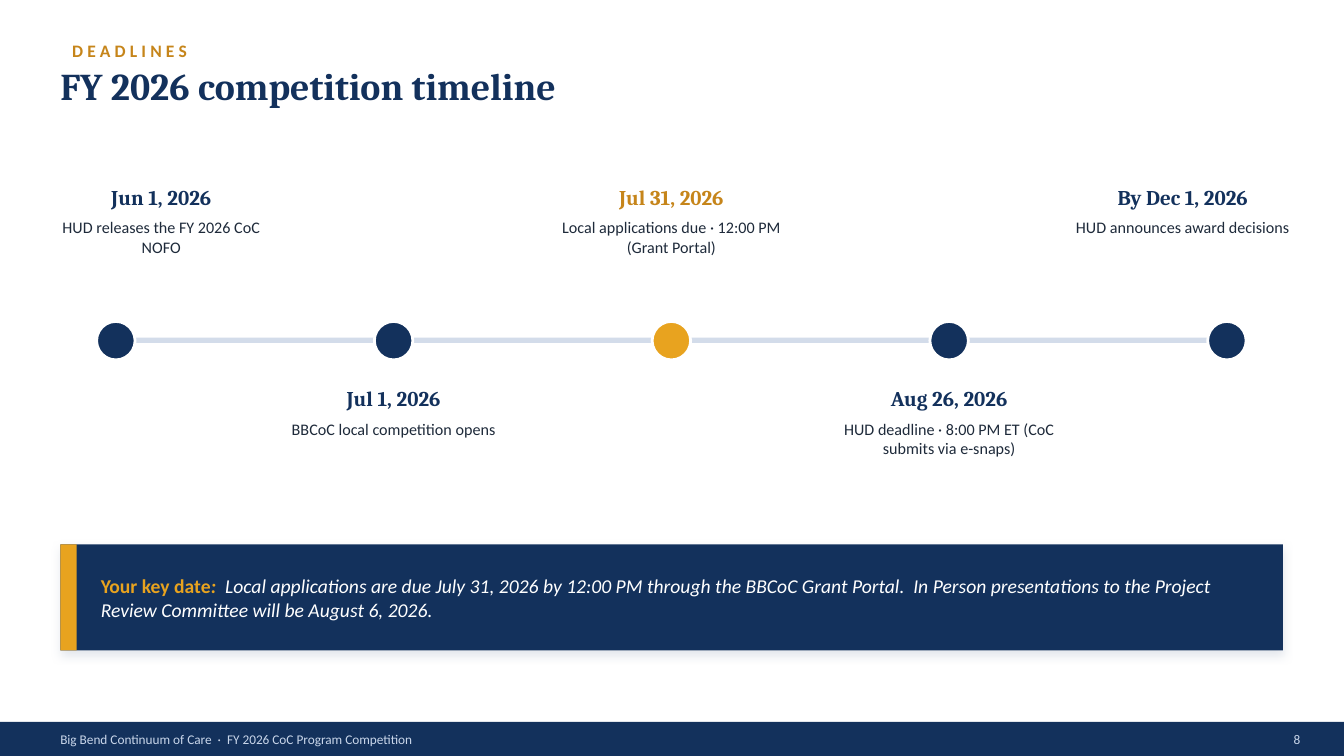
from lxml import etree
from pptx import Presentation
from pptx.dml.color import RGBColor
from pptx.enum.shapes import MSO_SHAPE
from pptx.enum.text import MSO_ANCHOR, PP_ALIGN
from pptx.oxml.ns import qn
from pptx.util import Cm, Pt

RECTANGLE, OVAL = MSO_SHAPE.RECTANGLE, MSO_SHAPE.OVAL
TOP, MIDDLE = MSO_ANCHOR.TOP, MSO_ANCHOR.MIDDLE
LEFT, CENTER, RIGHT = PP_ALIGN.LEFT, PP_ALIGN.CENTER, PP_ALIGN.RIGHT

# Content
KICKER = "DEADLINES"
TITLE = "FY 2026 competition timeline"
MILESTONES = [
    # date, description, highlighted
    ("Jun 1, 2026", "HUD releases the FY 2026 CoC NOFO", False),
    ("Jul 1, 2026", "BBCoC local competition opens", False),
    ("Jul 31, 2026", "Local applications due · 12:00 PM (Grant Portal)", True),
    ("Aug 26, 2026", "HUD deadline · 8:00 PM ET (CoC submits via e-snaps)", False),
    ("By Dec 1, 2026", "HUD announces award decisions", False),
]
KEY_DATE = [
    # text, colour, bold, italic
    ("Your key date", "gold", True, False),
    (":  ", "gold", True, True),
    ("Local applications are due July 31, 2026 by 12:00 PM through the BBCoC "
     "Grant Portal.  In Person presentations to the Project Review Committee "
     "will be August 6, 2026.", "white", False, True),
]
FOOTER = "Big Bend Continuum of Care  ·  FY 2026 CoC Program Competition"
PAGE_NUMBER = "8"

COLORS = {
    "navy": "13315C", "gold": "E8A31F", "ochre": "C6851A", "ink": "1E2A3A",
    "track": "D3DCEA", "mist": "C9D6EA", "white": "FFFFFF", "shadow": "9AA7BC",
}
HEADING, BODY = "Cambria", "Calibri"

# Layout in centimetres
WIDTH, HEIGHT = 33.87, 19.05
MARGIN = 1.52
FIRST_X, STEP = 2.92, 7.0
TRACK_Y, TRACK_HEIGHT = 8.51, 0.13
DOT_SIZE, DOT_TOP = 0.97, 8.1
LABEL_WIDTH, LABEL_EDGE = 5.59, 1.27
LABEL_TOPS = (4.45, 9.53)  # above and below the track, in turn
DATE_HEIGHT, DESCRIPTION_HEIGHT = 1.02, 2.54
BANNER_TOP, BANNER_WIDTH, BANNER_HEIGHT = 13.72, 30.81, 2.67
FOOTER_TOP, FOOTER_HEIGHT = 18.19, 0.86

presentation = Presentation()
presentation.slide_width, presentation.slide_height = Cm(WIDTH), Cm(HEIGHT)
slide = presentation.slides.add_slide(presentation.slide_layouts[6])


def color(name):
    return RGBColor.from_string(COLORS[name])


def add_shape(kind, left, top, width, height, fill, outline=None):
    shape = slide.shapes.add_shape(kind, Cm(left), Cm(top), Cm(width), Cm(height))
    shape.shadow.inherit = False
    shape.fill.solid()
    shape.fill.fore_color.rgb = color(fill)
    if outline:
        shape.line.color.rgb = color(outline)
        shape.line.width = Pt(2)
    else:
        shape.line.fill.background()
    return shape


def add_text(left, top, width, height, runs, size, font=BODY, anchor=MIDDLE,
             align=LEFT, inset=0.0, line_spacing=None):
    box = slide.shapes.add_textbox(Cm(left), Cm(top), Cm(width), Cm(height))
    frame = box.text_frame
    frame.word_wrap = True
    frame.vertical_anchor = anchor
    frame.margin_left = frame.margin_right = Cm(inset)
    frame.margin_top = frame.margin_bottom = Cm(inset / 2)
    paragraph = frame.paragraphs[0]
    paragraph.alignment = align
    if line_spacing:
        paragraph.line_spacing = line_spacing
    for text, fill, bold, italic in runs:
        run = paragraph.add_run()
        run.text = text
        run.font.name, run.font.size = font, Pt(size)
        run.font.bold, run.font.italic = bold, italic
        run.font.color.rgb = color(fill)
    return paragraph


def add_soft_shadow(shape):
    effects = shape._element.spPr.find(qn("a:effectLst"))
    shadow = etree.SubElement(effects, qn("a:outerShdw"), blurRad=str(Pt(7)),
                              dist=str(Pt(3)), dir="5400000", rotWithShape="0")
    tint = etree.SubElement(shadow, qn("a:srgbClr"), val=COLORS["shadow"])
    etree.SubElement(tint, qn("a:alpha"), val="28000")


# Heading
kicker = add_text(1.57, 0.86, 27.94, 0.81, [(KICKER, "ochre", True, False)], 12.5,
                  inset=0.25)
kicker.runs[0].font._element.set("spc", "300")
add_text(MARGIN, 1.57, 30.73, 2.16, [(TITLE, "navy", True, False)], 27, HEADING, TOP)

# Timeline
add_shape(RECTANGLE, FIRST_X, TRACK_Y, STEP * (len(MILESTONES) - 1), TRACK_HEIGHT,
          "track")
for index, (date, description, highlighted) in enumerate(MILESTONES):
    center = FIRST_X + index * STEP
    add_shape(OVAL, center - DOT_SIZE / 2, DOT_TOP, DOT_SIZE, DOT_SIZE,
              "gold" if highlighted else "navy", "white")
    # Labels are centred on their dot but kept inside the slide edges
    left = min(max(center - LABEL_WIDTH / 2, LABEL_EDGE),
               WIDTH - LABEL_EDGE - LABEL_WIDTH)
    top = LABEL_TOPS[index % 2]
    add_text(left, top, LABEL_WIDTH, DATE_HEIGHT,
             [(date, "ochre" if highlighted else "navy", True, False)], 15, HEADING,
             align=CENTER)
    add_text(left, top + DATE_HEIGHT, LABEL_WIDTH, DESCRIPTION_HEIGHT,
             [(description, "ink", False, False)], 11.5, anchor=TOP, align=CENTER,
             line_spacing=1.02)

# Key date banner
banner = add_shape(RECTANGLE, MARGIN, BANNER_TOP, BANNER_WIDTH, BANNER_HEIGHT, "navy")
add_soft_shadow(banner)
add_shape(RECTANGLE, MARGIN, BANNER_TOP, 0.41, BANNER_HEIGHT, "gold")
add_text(2.54, BANNER_TOP, 29.21, BANNER_HEIGHT, KEY_DATE, 14)

# Footer
add_shape(RECTANGLE, 0, FOOTER_TOP, WIDTH, FOOTER_HEIGHT, "navy")
for left, width, text, align in [(MARGIN, 22.86, FOOTER, LEFT),
                                 (31.5, 1.27, PAGE_NUMBER, RIGHT)]:
    add_text(left, FOOTER_TOP, width, FOOTER_HEIGHT, [(text, "mist", False, False)],
             9.5, align=align)

presentation.save("out.pptx")
